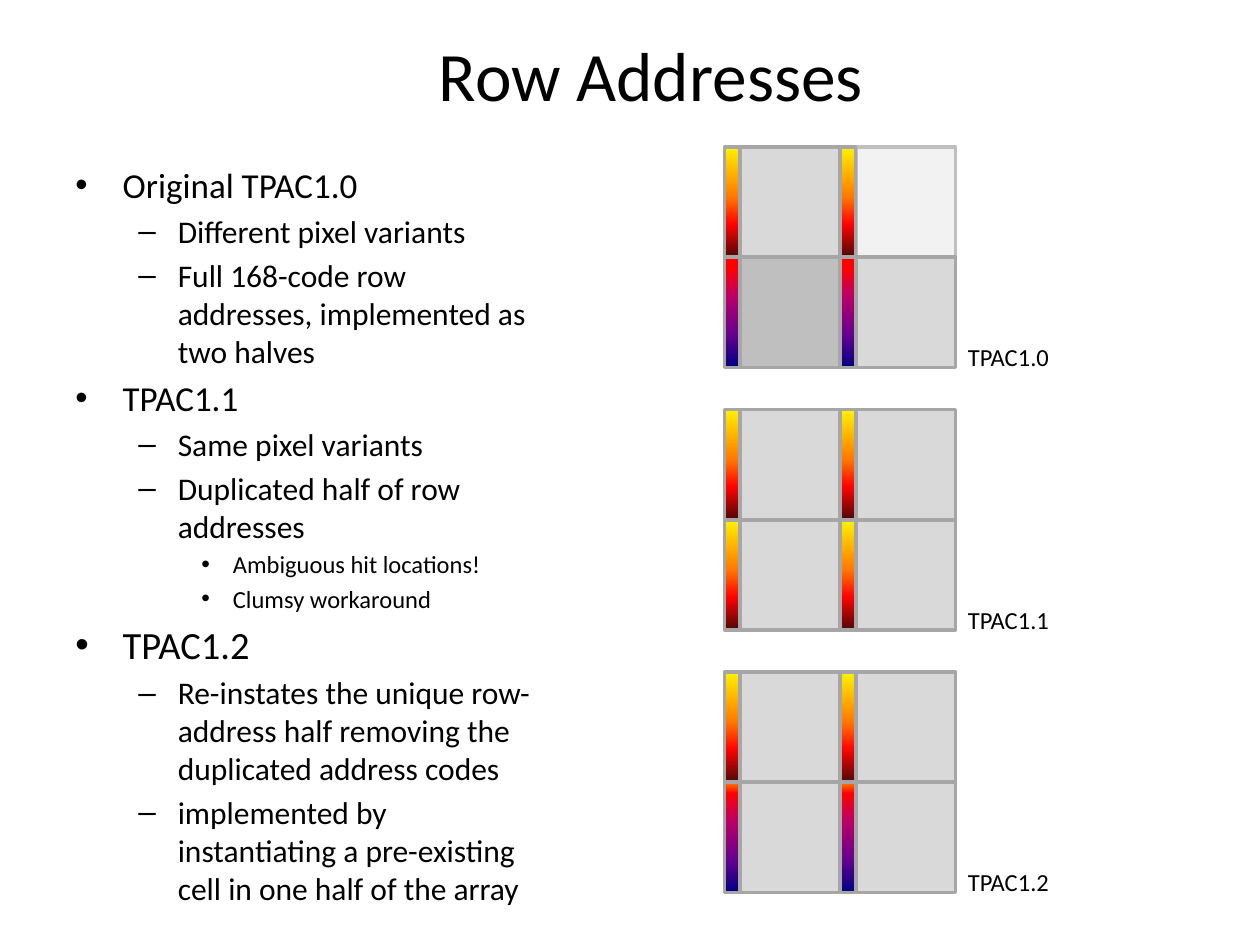
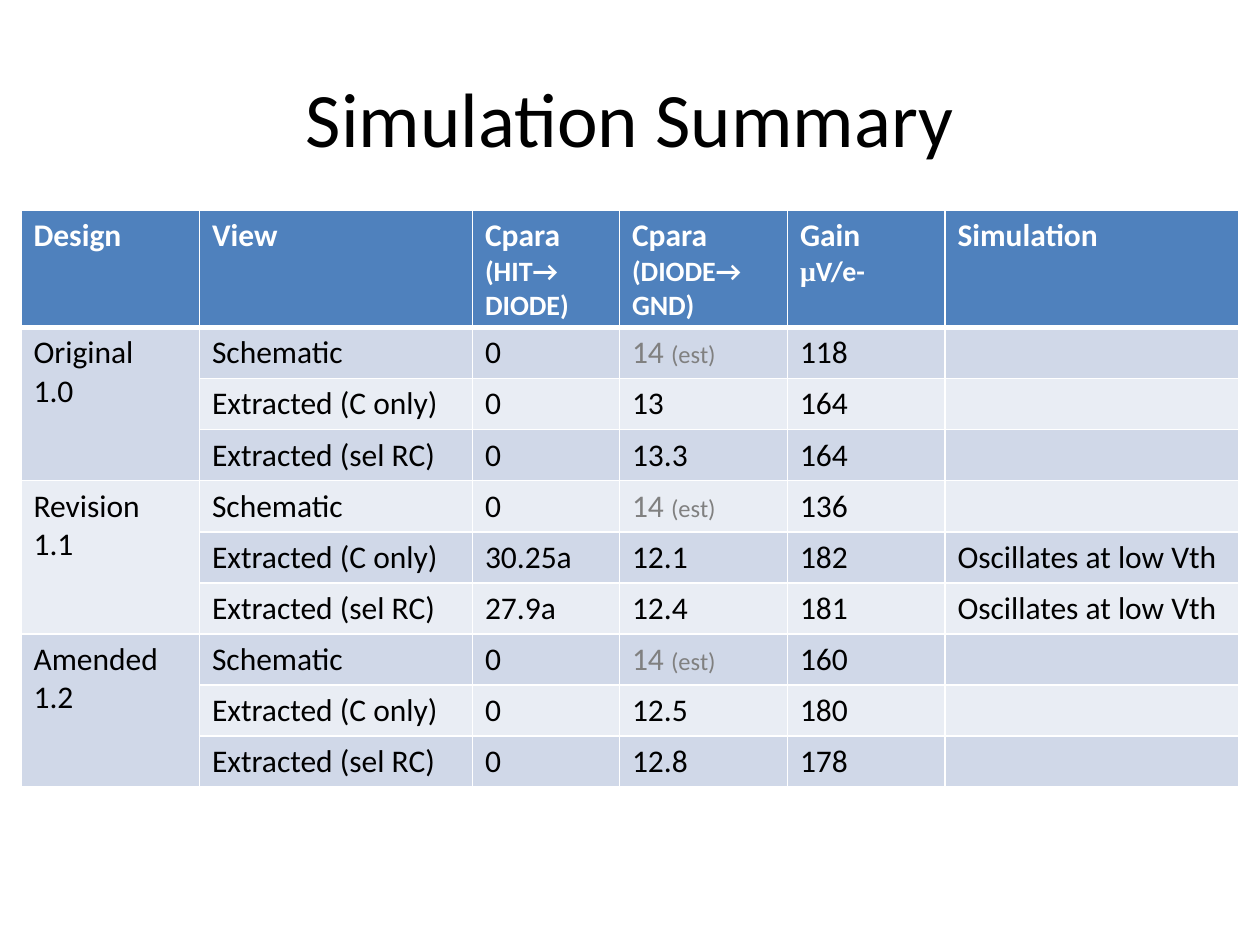
from dataclasses import dataclass

from lxml import etree
from pptx import Presentation
from pptx import util as u
from pptx.dml.color import RGBColor
from pptx.enum import shapes, text
from pptx.oxml import ns

# Grid: 24 columns or rows to the inch
COLUMNS, ROWS = 240, 180
UNIT = u.Inches(1) // 24

BLACK = RGBColor(0x00, 0x00, 0x00)
WHITE = RGBColor(0xFF, 0xFF, 0xFF)
ESTIMATE_GREY = RGBColor(0x80, 0x80, 0x80)
PIXEL_GREY = RGBColor(0xD9, 0xD9, 0xD9)
PIXEL_DARK = RGBColor(0xBF, 0xBF, 0xBF)
PIXEL_LIGHT = RGBColor(0xF2, 0xF2, 0xF2)
OUTLINE_GREY = RGBColor(0xA6, 0xA6, 0xA6)
HEADER_BLUE = RGBColor(0x4F, 0x81, 0xBD)
BAND_DARK = RGBColor(0xD0, 0xD8, 0xE8)
BAND_LIGHT = RGBColor(0xE9, 0xED, 0xF4)
YELLOW = RGBColor(0xFF, 0xF2, 0x00)
ORANGE = RGBColor(0xFF, 0x7A, 0x00)
SCARLET = RGBColor(0xFF, 0x03, 0x00)
MAROON = RGBColor(0x4D, 0x08, 0x08)
NAVY = RGBColor(0x00, 0x00, 0x82)
PURPLE = RGBColor(0x66, 0x00, 0x8F)
MAGENTA = RGBColor(0xBA, 0x00, 0x66)
RED = RGBColor(0xFF, 0x00, 0x00)
AMBER = RGBColor(0xFF, 0x82, 0x00)


@dataclass(frozen=True)
class Span:
    text: str
    size: float = 18
    color: RGBColor = BLACK
    bold: bool = False
    font: str = "Calibri"


@dataclass(frozen=True)
class Level:
    bullet: str
    margin: float
    hanging: float


@dataclass(frozen=True)
class Codes:
    """Row address codes, shown as a vertical gradient."""
    stops: tuple
    angle: int


@dataclass(frozen=True)
class Chip:
    name: str
    upper: Codes
    lower: Codes
    pixels: tuple  # upper left, lower left, upper right, lower right


LEVELS = (Level("•", 9, 9), Level("–", 19.5, 7.5), Level("•", 30, 6))

WARM = Codes(((0, YELLOW), (45, ORANGE), (70, SCARLET), (100, MAROON)), 270)
COLD_STOPS = ((0, NAVY), (30, PURPLE), (65, MAGENTA), (90, RED))
COLD = Codes(COLD_STOPS + ((100, RED),), 90)
COLD_AMBER = Codes(COLD_STOPS + ((100, AMBER),), 90)

CHIPS = (
    Chip("TPAC1.0", WARM, COLD, (PIXEL_GREY, PIXEL_DARK, PIXEL_LIGHT, PIXEL_GREY)),
    Chip("TPAC1.1", WARM, WARM, (PIXEL_GREY,) * 4),
    Chip("TPAC1.2", WARM, COLD_AMBER, (PIXEL_GREY,) * 4),
)
CHIP_LEFT, CHIP_TOP, CHIP_STEP = 138, 28, 50
STRIP_WIDTH, PIXEL_WIDTH, HALF_HEIGHT, HALF_STEP = 3, 19, 21, 22

# Level, size, wording
OUTLINE = (
    (0, 20, "Original TPAC1.0"),
    (1, 18, "Different pixel variants"),
    (1, 18, "Full 168-code row addresses, implemented as two halves"),
    (0, 20, "TPAC1.1"),
    (1, 18, "Same pixel variants"),
    (1, 18, "Duplicated half of row addresses"),
    (2, 14, "Ambiguous hit locations!"),
    (2, 14, "Clumsy workaround"),
    (0, 22, "TPAC1.2"),
    (1, 18, "Re-instates the unique row-address half removing the duplicated address codes"),
    (1, 18, "implemented by instantiating a pre-existing cell in one half of the array"),
)


def heading(wording: str, size: float = 18, font: str = "Calibri") -> Span:
    return Span(wording, size, WHITE, True, font)


# Each heading is a list of paragraphs, each paragraph a list of spans
HEADINGS = (
    [[heading("Design")]],
    [[heading("View")]],
    [[heading("Cpara "), heading("(HIT→ DIODE)", 16)]],
    [[heading("Cpara")], [heading("(DIODE→ GND)", 16)]],
    [[heading("Gain")], [heading("μ", 16, "Times New Roman"), heading("V/e-", 16)]],
    [[heading("Simulation")]],
)
COLUMN_WIDTHS = (34, 52, 28, 32, 30, 56)
HEADER_HEIGHT, ROW_HEIGHT = 22.4, 9.73
VIEWS = ("Schematic", "Extracted (C only)", "Extracted (sel RC)")
UNSTABLE = "Oscillates at low Vth"
ESTIMATE = "14 (est)"
# Design, then HIT, DIODE, gain and simulation for each view
DESIGNS = (
    (("Original", "1.0"), (("0", ESTIMATE, "118", ""),
                           ("0", "13", "164", ""),
                           ("0", "13.3", "164", ""))),
    (("Revision", "1.1"), (("0", ESTIMATE, "136", ""),
                           ("30.25a", "12.1", "182", UNSTABLE),
                           ("27.9a", "12.4", "181", UNSTABLE))),
    (("Amended", "1.2"), (("0", ESTIMATE, "160", ""),
                          ("0", "12.5", "180", ""),
                          ("0", "12.8", "178", ""))),
)


def grid(*cells: float) -> list[u.Emu]:
    return [u.Emu(round(cell * UNIT)) for cell in cells]


def apply(target, formats: dict) -> None:
    for name, value in formats.items():
        setattr(target, name, value)


# Text
def write(paragraph, spans: list[Span]) -> None:
    for span in spans:
        run = paragraph.add_run()
        run.text = span.text
        apply(run.font, {"size": u.Pt(span.size), "bold": span.bold, "name": span.font})
        run.font.color.rgb = span.color


def write_all(frame, paragraphs: list[list[Span]]) -> None:
    for index, spans in enumerate(paragraphs):
        write(frame.add_paragraph() if index else frame.paragraphs[0], spans)


def add_text(slide, place: tuple, paragraphs: list[list[Span]], **formats):
    frame = slide.shapes.add_textbox(*grid(*place)).text_frame
    apply(frame, {"word_wrap": True, **formats})
    write_all(frame, paragraphs)
    return frame


def add_title(slide, place: tuple, wording: str, size: float) -> None:
    frame = add_text(slide, place, [[Span(wording, size)]],
                     vertical_anchor=text.MSO_ANCHOR.MIDDLE)
    frame.paragraphs[0].alignment = text.PP_ALIGN.CENTER


def set_bullet(paragraph, level: Level) -> None:
    properties = paragraph._p.get_or_add_pPr()
    margin, hanging = grid(level.margin, level.hanging)
    properties.set("marL", str(margin))
    properties.set("indent", str(-hanging))
    before = etree.SubElement(properties, ns.qn("a:spcBef"))
    etree.SubElement(before, ns.qn("a:spcPct"), val="20000")
    etree.SubElement(properties, ns.qn("a:buFont"), typeface="Arial")
    etree.SubElement(properties, ns.qn("a:buChar"), char=level.bullet)


# Chips
def add_block(group, place: tuple, outline: RGBColor):
    block = group.shapes.add_shape(shapes.MSO_SHAPE.RECTANGLE, *grid(*place))
    block.shadow.inherit = False
    block.line.color.rgb = outline
    block.line.width = u.Pt(2)
    return block


def add_strip(group, place: tuple, codes: Codes) -> None:
    strip = add_block(group, place, OUTLINE_GREY)
    strip.fill.gradient()
    strip.fill.gradient_angle = codes.angle
    stops = strip._element.spPr.find(".//" + ns.qn("a:gsLst"))
    for stop in list(stops):
        stops.remove(stop)
    for percent, color in codes.stops:
        stop = etree.SubElement(stops, ns.qn("a:gs"), pos=str(percent * 1000))
        etree.SubElement(stop, ns.qn("a:srgbClr"), val=str(color))


def add_chip(slide, chip: Chip, top: float) -> None:
    group = slide.shapes.add_group_shape()
    for index, shade in enumerate(chip.pixels):
        side, half = divmod(index, 2)
        left = CHIP_LEFT + side * HALF_STEP
        y = top + half * HALF_HEIGHT
        outline = PIXEL_DARK if shade == PIXEL_LIGHT else OUTLINE_GREY
        pixel = add_block(group, (left + STRIP_WIDTH, y, PIXEL_WIDTH, HALF_HEIGHT), outline)
        pixel.fill.solid()
        pixel.fill.fore_color.rgb = shade
        add_strip(group, (left, y, STRIP_WIDTH, HALF_HEIGHT),
                  chip.lower if half else chip.upper)
    add_text(slide, (CHIP_LEFT + 2 * HALF_STEP, top + 36, 20.4, 8.1),
             [[Span(chip.name, 14)]], word_wrap=False)


# Table
def style_cell(cell, fill: RGBColor, top: float = 1, bottom: float = 1) -> None:
    properties = cell._tc.get_or_add_tcPr()
    for side, width in {"L": 1, "R": 1, "T": top, "B": bottom}.items():
        border = etree.SubElement(properties, ns.qn(f"a:ln{side}"), w=str(u.Pt(width)))
        paint = etree.SubElement(border, ns.qn("a:solidFill"))
        etree.SubElement(paint, ns.qn("a:srgbClr"), val=str(WHITE))
    cell.fill.solid()
    cell.fill.fore_color.rgb = fill


def value_spans(value: str) -> list[Span]:
    if value == ESTIMATE:
        return [Span("14 ", 18, ESTIMATE_GREY), Span("(est)", 14, ESTIMATE_GREY)]
    return [Span(value)] if value else []


def add_summary(slide) -> None:
    row_count = 1 + len(DESIGNS) * len(VIEWS)
    place = grid(4, 40, sum(COLUMN_WIDTHS), HEADER_HEIGHT + (row_count - 1) * ROW_HEIGHT)
    summary = slide.shapes.add_table(row_count, len(HEADINGS), *place).table
    for column, width in zip(summary.columns, grid(*COLUMN_WIDTHS)):
        column.width = width
    for index, row in enumerate(summary.rows):
        row.height = grid(ROW_HEIGHT if index else HEADER_HEIGHT)[0]

    for column, paragraphs in enumerate(HEADINGS):
        cell = summary.cell(0, column)
        style_cell(cell, HEADER_BLUE, bottom=3)
        write_all(cell.text_frame, paragraphs)

    for row in range(1, row_count):
        design, view = divmod(row - 1, len(VIEWS))
        name, results = DESIGNS[design]
        band = BAND_DARK if row % 2 else BAND_LIGHT
        for column in range(len(HEADINGS)):
            style_cell(summary.cell(row, column), band, top=3 if row == 1 else 1)
        if view == 0:
            first = summary.cell(row, 0)
            first.merge(summary.cell(row + len(VIEWS) - 1, 0))
            write_all(first.text_frame, [[Span(line)] for line in name])
        for column, value in enumerate((VIEWS[view], *results[view]), 1):
            write_all(summary.cell(row, column).text_frame, [value_spans(value)])


# Slides
def build_row_addresses(slide) -> None:
    add_title(slide, (16, 6, 216, 16), "Row Addresses", 39.6)
    outline = add_text(slide, (12, 30, 92, 138),
                       [[Span(wording, size)] for _, size, wording in OUTLINE])
    for paragraph, (depth, _, _) in zip(outline.paragraphs, OUTLINE):
        paragraph.level = depth
        set_bullet(paragraph, LEVELS[depth])
    for index, chip in enumerate(CHIPS):
        add_chip(slide, chip, CHIP_TOP + index * CHIP_STEP)


def build_simulation_summary(slide) -> None:
    add_title(slide, (12, 7.2, 216, 30), "Simulation Summary", 44)
    add_summary(slide)


def main() -> None:
    deck = Presentation()
    deck.slide_width, deck.slide_height = grid(COLUMNS, ROWS)
    for build in (build_row_addresses, build_simulation_summary):
        build(deck.slides.add_slide(deck.slide_layouts[6]))
    deck.save("out.pptx")


if __name__ == "__main__":
    main()
